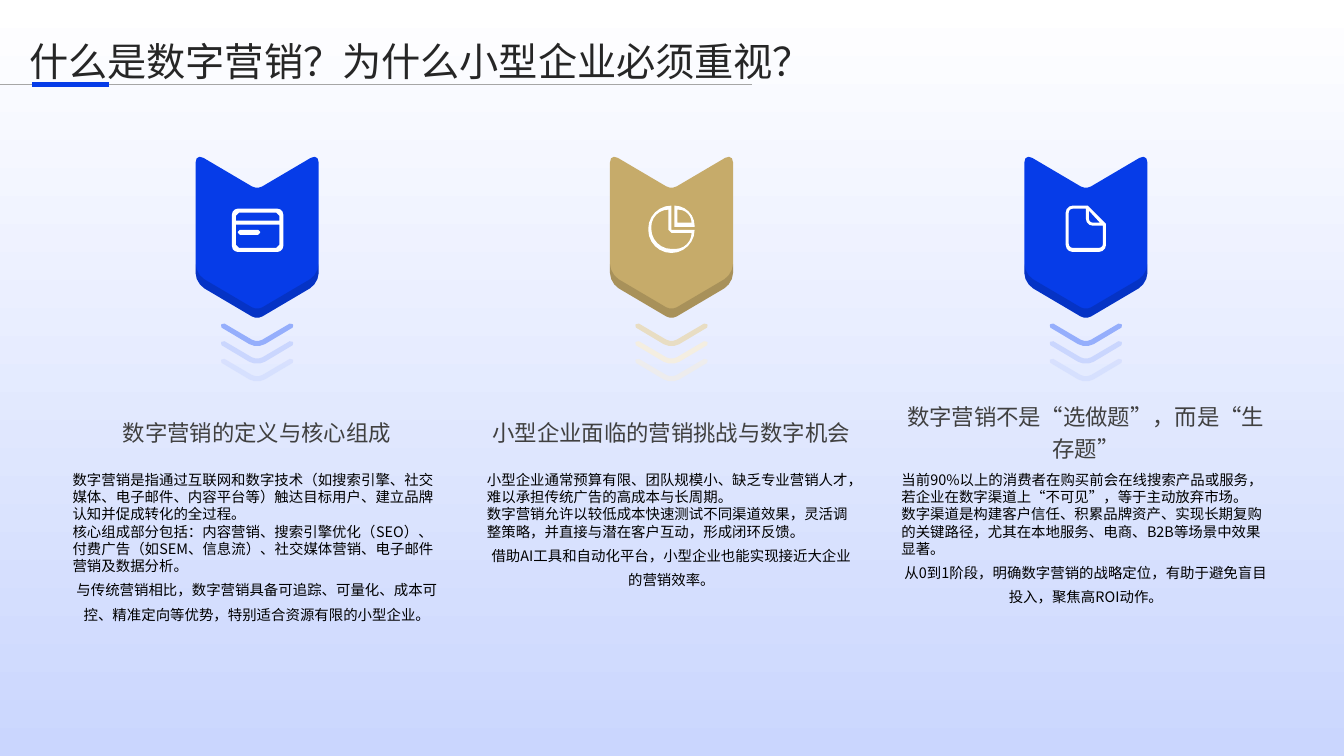
from dataclasses import dataclass
from math import dist

from lxml.etree import SubElement
from pptx import Presentation
from pptx.dml.color import RGBColor
from pptx.enum.shapes import MSO_CONNECTOR, MSO_SHAPE
from pptx.enum.text import MSO_ANCHOR, MSO_AUTO_SIZE, PP_ALIGN
from pptx.oxml.ns import qn
from pptx.util import Inches, Pt

Corner = tuple[float, ...]  # x, y and, if the corner is rounded, its radius
Outline = list[Corner]


@dataclass(frozen=True)
class Theme:
    font: str = "Noto Sans CJK SC"
    title_size: float = 28
    heading_size: float = 16
    body_size: float = 10.3
    white: str = "FFFFFF"
    black: str = "000000"
    title: str = "262626"
    heading: str = "404040"
    rule: str = "A6A6A6"
    blue: str = "063CE8"
    blue_mid: str = "95AEFC"
    blue_pale: str = "CAD6FE"
    gold: str = "C6AB6A"
    gold_mid: str = "E8DDC3"
    gold_pale: str = "F4EEE1"


@dataclass(frozen=True)
class Palette:
    badge: str
    mid: str
    pale: str
    last_opacity: int


@dataclass(frozen=True)
class Column:
    heading: str
    body: tuple[str, ...]
    palette: Palette
    icon: list[Outline]


T = Theme()
BLUE = Palette(T.blue, T.blue_mid, T.blue_pale, 50)
GOLD = Palette(T.gold, T.gold_mid, T.gold_pale, 60)
FIRST_CENTER, COLUMN_STEP = 2.55, 4.11
TEXT_WIDTH = 3.66
CHEVRON_STEP = 0.175


def symmetric(half: Outline) -> Outline:
    """Complete a right half, listed from axis to axis, with its mirror."""
    return half + [(-x, *rest) for x, *rest in reversed(half) if x]


# Outlines: x from the column centre, y from the slide top
BADGE = symmetric([(0, 1.88, 0.06), (0.61, 1.52, 0.09), (0.61, 2.81, 0.1), (0, 3.17, 0.06)])
SHADE = symmetric([(0, 3.08, 0.06), (0.61, 2.72, 0.1), (0.61, 2.62),
                   (0.61, 2.81, 0.1), (0, 3.17, 0.06)])
CHEVRON = symmetric([(0, 3.4, 0.06), (0.34, 3.2, 0.02), (0.37, 3.24, 0.02), (0, 3.46, 0.09)])

CARD_ICON = [
    [(-0.25, 2.07, 0.06), (0.26, 2.07, 0.06), (0.26, 2.5, 0.06), (-0.25, 2.5, 0.06)],
    [(-0.21, 2.11, 0.03), (0.22, 2.11, 0.03), (0.22, 2.19), (-0.21, 2.19)],
    [(-0.21, 2.23), (0.22, 2.23), (0.22, 2.46, 0.03), (-0.21, 2.46, 0.03)],
    [(-0.19, 2.28, 0.02), (0.03, 2.28, 0.02), (0.03, 2.33, 0.02), (-0.19, 2.33, 0.02)],
]
PIE_ICON = [
    [(0, 2.04), (0, 2.28), (0.23, 2.28), (0.23, 2.51, 0.23),
     (-0.23, 2.51, 0.23), (-0.23, 2.04, 0.23)],
    [(-0.03, 2.08), (-0.03, 2.31, 0.03), (0.2, 2.31), (0.2, 2.47, 0.16),
     (-0.2, 2.47, 0.2), (-0.2, 2.08, 0.17)],
    [(0.03, 2.04), (0.23, 2.04, 0.2), (0.23, 2.25), (0.03, 2.25)],
    [(0.06, 2.08), (0.2, 2.08, 0.13), (0.2, 2.21), (0.06, 2.21)],
]
FILE_ICON = [
    [(-0.2, 2.04, 0.07), (0.02, 2.04), (0.2, 2.22),
     (0.2, 2.5, 0.07), (-0.2, 2.5, 0.07)],
    [(0.03, 2.09), (0.14, 2.21), (0.03, 2.21, 0.04)],
    [(-0.17, 2.07, 0.04), (0, 2.07), (0, 2.24, 0.07), (0.17, 2.24),
     (0.17, 2.46, 0.04), (-0.17, 2.46, 0.04)],
]

TITLE = "什么是数字营销？为什么小型企业必须重视？"
COLUMNS = [
    Column("数字营销的定义与核心组成", (
        "数字营销是指通过互联网和数字技术（如搜索引擎、社交媒体、电子邮件、内容平台等）触达目标用户、建立品牌认知并促成转化的全过程。",
        "核心组成部分包括：内容营销、搜索引擎优化（SEO）、付费广告（如SEM、信息流）、社交媒体营销、电子邮件营销及数据分析。",
        "与传统营销相比，数字营销具备可追踪、可量化、成本可控、精准定向等优势，特别适合资源有限的小型企业。",
    ), BLUE, CARD_ICON),
    Column("小型企业面临的营销挑战与数字机会", (
        "小型企业通常预算有限、团队规模小、缺乏专业营销人才，难以承担传统广告的高成本与长周期。",
        "数字营销允许以较低成本快速测试不同渠道效果，灵活调整策略，并直接与潜在客户互动，形成闭环反馈。",
        "借助AI工具和自动化平台，小型企业也能实现接近大企业的营销效率。",
    ), GOLD, PIE_ICON),
    Column("数字营销不是“选做题”，而是“生存题”", (
        "当前90%以上的消费者在购买前会在线搜索产品或服务，若企业在数字渠道上“不可见”，等于主动放弃市场。",
        "数字渠道是构建客户信任、积累品牌资产、实现长期复购的关键路径，尤其在本地服务、电商、B2B等场景中效果显著。",
        "从0到1阶段，明确数字营销的战略定位，有助于避免盲目投入，聚焦高ROI动作。",
    ), BLUE, FILE_ICON),
]


def rounded(outline: Outline) -> list[tuple[float, float]]:
    """Turn corners with radii into points, more of them for larger radii."""
    points = []
    for i, (x, y, *radius) in enumerate(outline):
        if not radius:
            points.append((x, y))
            continue
        ends = []
        for nx, ny, *_ in (outline[i - 1], outline[(i + 1) % len(outline)]):
            f = radius[0] / dist((x, y), (nx, ny))
            ends.append((x + f * (nx - x), y + f * (ny - y)))
        (ax, ay), (bx, by) = ends
        steps = 1 if radius[0] < 0.04 else 3 if radius[0] <= 0.1 else 6
        for k in range(steps + 1):
            t = k / steps
            # Cubic arc whose handles reach 55% of the way to the corner
            wa = (1 - t) ** 3 + 1.35 * (1 - t) ** 2 * t
            wb = t ** 3 + 1.35 * (1 - t) * t ** 2
            wv = 1 - wa - wb
            points.append((wa * ax + wb * bx + wv * x, wa * ay + wb * by + wv * y))
    return points


def add_outline(slide, outlines: list[Outline], cx: float, color: str,
                dy: float = 0, opacity: int = 100) -> None:
    builder = None
    for outline in outlines:
        points = [(Inches(cx + x), Inches(y + dy)) for x, y in rounded(outline)]
        if builder is None:
            builder = slide.shapes.build_freeform(*points[0])
        else:
            builder.move_to(*points[0])
        builder.add_line_segments(points[1:], close=True)
    sp = builder.convert_to_shape()
    sp.shadow.inherit = False
    sp.line.fill.background()
    sp.fill.solid()
    sp.fill.fore_color.rgb = RGBColor.from_string(color)
    if opacity < 100:
        clr = sp._element.spPr.find(qn("a:solidFill"))[0]
        SubElement(clr, qn("a:alpha"), val=str(opacity * 1000))


def add_text_box(slide, left: float, top: float, width: float, height: float):
    tf = slide.shapes.add_textbox(Inches(left), Inches(top), Inches(width), Inches(height)).text_frame
    tf.word_wrap = True
    return tf


def clear_margins(tf) -> None:
    tf.margin_left = tf.margin_right = tf.margin_top = tf.margin_bottom = 0


def format_paragraph(p, size: float, color: str, align: PP_ALIGN, spacing: float) -> None:
    p.alignment = align
    p.line_spacing = spacing
    for r in p.runs:
        r.font.size = Pt(size)
        r.font.name = T.font
        r.font.color.rgb = RGBColor.from_string(color)
        SubElement(r.font._element, qn("a:ea"), typeface=T.font)


def add_background(slide, prs) -> None:
    sp = slide.shapes.add_shape(MSO_SHAPE.RECTANGLE, 0, 0, prs.slide_width, prs.slide_height)
    sp.shadow.inherit = False
    sp.line.fill.background()
    sp.fill.gradient()
    sp.fill.gradient_angle = 270
    for stop, color in zip(sp.fill.gradient_stops, (T.white, T.blue_pale)):
        stop.color.rgb = RGBColor.from_string(color)


def add_rule(slide, x1: float, x2: float, y: float, color: str, width: float) -> None:
    line = slide.shapes.add_connector(MSO_CONNECTOR.STRAIGHT, Inches(x1), Inches(y), Inches(x2), Inches(y))
    line.line.color.rgb = RGBColor.from_string(color)
    line.line.width = Pt(width)
    SubElement(line._element.spPr, qn("a:effectLst"))


def add_column(slide, col: Column, cx: float) -> None:
    pal = col.palette
    add_outline(slide, [BADGE], cx, pal.badge)
    add_outline(slide, [SHADE], cx, T.black, opacity=15)
    add_outline(slide, col.icon, cx, T.white)
    for i, (color, opacity) in enumerate(((pal.mid, 100), (pal.pale, 100), (pal.pale, pal.last_opacity))):
        add_outline(slide, [CHEVRON], cx, color, i * CHEVRON_STEP, opacity)

    left = cx - TEXT_WIDTH / 2
    tf = add_text_box(slide, left, 3.87, TEXT_WIDTH, 0.79)
    clear_margins(tf)
    tf.vertical_anchor = MSO_ANCHOR.MIDDLE
    tf.text = col.heading
    format_paragraph(tf.paragraphs[0], T.heading_size, T.heading, PP_ALIGN.CENTER, 1.2)

    tf = add_text_box(slide, left, 4.67, TEXT_WIDTH, 1.77)
    clear_margins(tf)
    tf.text = "\n".join(col.body)
    *facts, conclusion = tf.paragraphs
    for p in facts:
        format_paragraph(p, T.body_size, T.black, PP_ALIGN.LEFT, 1.0)
    format_paragraph(conclusion, T.body_size, T.black, PP_ALIGN.CENTER, 1.4)


def main() -> None:
    prs = Presentation()
    prs.slide_width, prs.slide_height = Inches(13.33), Inches(7.5)
    slide = prs.slides.add_slide(prs.slide_layouts[6])
    add_background(slide, prs)
    for i, col in enumerate(COLUMNS):
        add_column(slide, col, FIRST_CENTER + i * COLUMN_STEP)

    tf = add_text_box(slide, 0.19, 0.27, 12.51, 0.62)
    tf.auto_size = MSO_AUTO_SIZE.SHAPE_TO_FIT_TEXT
    tf.text = TITLE
    format_paragraph(tf.paragraphs[0], T.title_size, T.title, PP_ALIGN.LEFT, 1.1)
    add_rule(slide, 0, 7.46, 0.84, T.rule, 0.5)
    add_rule(slide, 0.32, 1.08, 0.84, T.blue, 3.5)
    prs.save("out.pptx")


if __name__ == "__main__":
    main()
